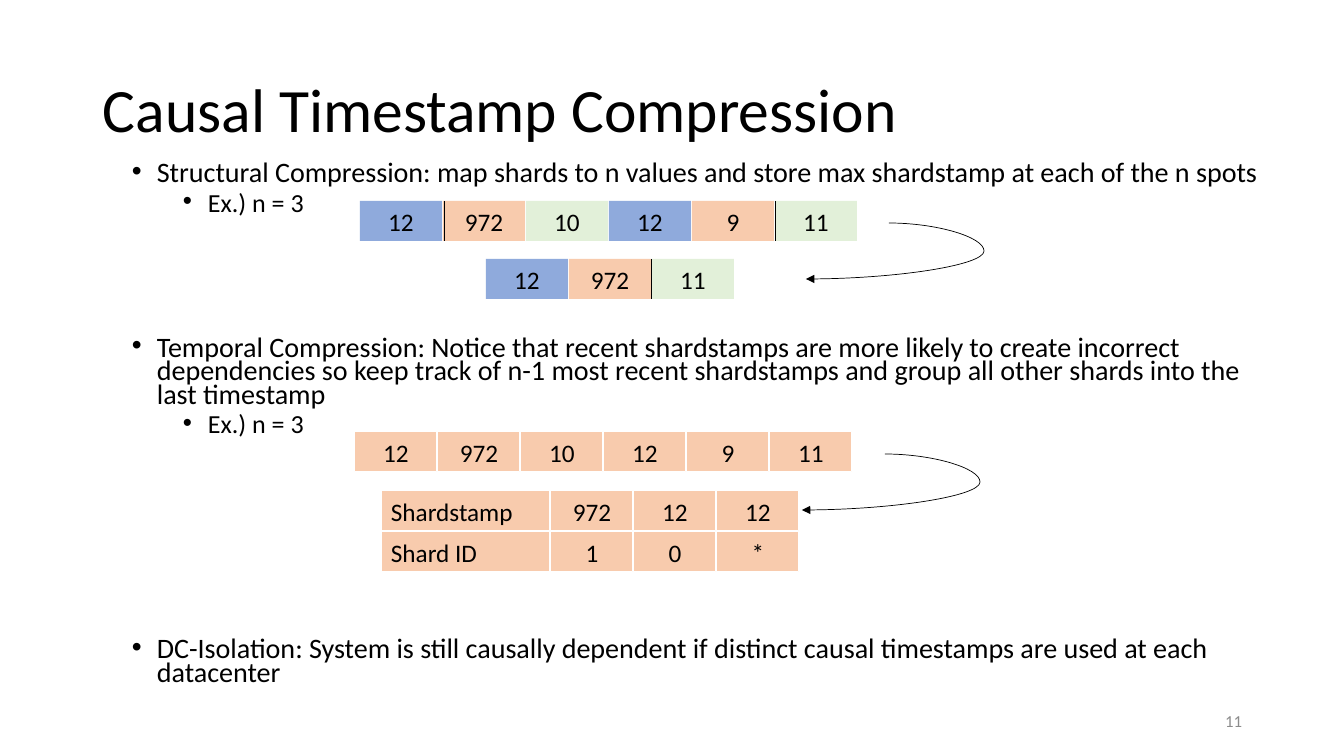
from lxml import etree
from pptx import Presentation
from pptx import util as u
from pptx.dml.color import RGBColor
from pptx.enum import shapes, text
from pptx.oxml.ns import qn

PX = 914400 / 100.8  # EMU in one px
FONT = "Calibri"
BLACK = RGBColor(0x00, 0x00, 0x00)
WHITE = RGBColor(0xFF, 0xFF, 0xFF)
GRAY = RGBColor(0x8C, 0x8C, 0x8C)
BLUE = RGBColor(0x8F, 0xAA, 0xDC)
ORANGE = RGBColor(0xF8, 0xCB, 0xAD)
GREEN = RGBColor(0xE2, 0xF0, 0xD9)

# Content
TITLE = "Causal Timestamp Compression"
PAGE = "11"
BULLETS = [  # level, space before in points, text
    (0, 10, "Structural Compression: map shards to n values and store max "
            "shardstamp at each of the n spots"),
    (1, 5, "Ex.) n = 3"),
    (0, 87, "Temporal Compression: Notice that recent shardstamps are more likely "
            "to create incorrect dependencies so keep track of n-1 most recent "
            "shardstamps and group all other shards into the last timestamp"),
    (1, 5, "Ex.) n = 3"),
    (0, 144, "DC-Isolation: System is still causally dependent if distinct causal "
             "timestamps are used at each datacenter"),
]
LEVELS = [  # size in points, left margin in px
    (20.1, 25),
    (18.6, 76),
]
SHARDSTAMPS = ["12", "972", "10", "12", "9", "11"]
ROWS = [  # left, top, values, fills cycled over the values, outline
    (360, 201, SHARDSTAMPS, [BLUE, ORANGE, GREEN], None),
    (486, 259, ["12", "972", "11"], [BLUE, ORANGE, GREEN], None),
    (355, 432, SHARDSTAMPS, [ORANGE], WHITE),
    (551, 491, ["972", "12", "12"], [ORANGE], WHITE),
    (551, 532, ["1", "0", "*"], [ORANGE], WHITE),
]
ROW_LABELS = [(491, "Shardstamp"), (532, "Shard ID")]
SEPARATORS = [(444, 201), (651, 259), (775, 201)]
ARROWS = [(889, 223), (885, 454)]

CELL_WIDTH, CELL_HEIGHT, CELL_PITCH = 82, 40, 83
LABEL_LEFT, LABEL_WIDTH = 381, 169
ARROW_WIDTH, ARROW_HEIGHT, ARROW_BULGE = 83, 56, -114600
BULLET_INDENT = 25


def emu(*lengths):
    return [round(length * PX) for length in lengths]


def write(paragraph, words, size, color, **paragraph_format):
    for name, value in paragraph_format.items():
        setattr(paragraph, name, value)
    run = paragraph.add_run()
    run.text = words
    for name, value in {"name": FONT, "size": u.Pt(size)}.items():
        setattr(run.font, name, value)
    run.font.color.rgb = color


def add_text_box(box, anchor):
    frame = slide.shapes.add_textbox(*emu(*box)).text_frame
    frame.word_wrap = True
    frame.vertical_anchor = anchor
    return frame


def add_cell(box, words, fill, outline, alignment):
    cell = slide.shapes.add_shape(shapes.MSO_SHAPE.RECTANGLE, *emu(*box))
    cell.shadow.inherit = False
    cell.fill.solid()
    cell.fill.fore_color.rgb = fill
    if outline is None:
        cell.line.fill.background()
    else:
        cell.line.color.rgb = outline
        cell.line.width = u.Pt(0.75)
    cell.text_frame.word_wrap = True
    cell.text_frame.vertical_anchor = text.MSO_ANCHOR.TOP
    write(cell.text_frame.paragraphs[0], words, 18, BLACK, alignment=alignment)


def add_line(kind, ends, width):
    line = slide.shapes.add_connector(kind, *emu(*ends))
    line.line.color.rgb = BLACK
    line.line.width = u.Pt(width)
    etree.SubElement(line._element.spPr, qn("a:effectLst"))
    return line


presentation = Presentation()
presentation.slide_width, presentation.slide_height = emu(1344, 756)
slide = presentation.slides.add_slide(presentation.slide_layouts[6])

# Title
title = add_text_box((93, 40, 1159, 146), text.MSO_ANCHOR.MIDDLE)
write(title.paragraphs[0], TITLE, 44, BLACK, line_spacing=0.9)

# Bulleted text
body = add_text_box((122, 159, 1168, 556), text.MSO_ANCHOR.TOP)
for index, (level, space, words) in enumerate(BULLETS):
    paragraph = body.add_paragraph() if index else body.paragraphs[0]
    size, margin = LEVELS[level]
    write(paragraph, words, size, BLACK, level=level, line_spacing=0.7,
          space_before=u.Pt(space))
    properties = paragraph._p.get_or_add_pPr()
    for name, length in {"marL": margin, "indent": -BULLET_INDENT}.items():
        properties.set(name, str(emu(length)[0]))
    etree.SubElement(properties, qn("a:buFont"), typeface="Arial")
    etree.SubElement(properties, qn("a:buChar"), char="•")

# Rows of shardstamps
for left, top, values, fills, outline in ROWS:
    for column, value in enumerate(values):
        box = (left + column * CELL_PITCH, top, CELL_WIDTH, CELL_HEIGHT)
        add_cell(box, value, fills[column % len(fills)], outline, text.PP_ALIGN.CENTER)
for top, label in ROW_LABELS:
    add_cell((LABEL_LEFT, top, LABEL_WIDTH, CELL_HEIGHT), label, ORANGE, WHITE,
             text.PP_ALIGN.LEFT)

# Dark separators between cells
for x, top in SEPARATORS:
    add_line(shapes.MSO_CONNECTOR.STRAIGHT, (x, top, x, top + CELL_HEIGHT), 0.5)

# Curved arrows from each full row to its compressed row
for x, y in ARROWS:
    arrow = add_line(shapes.MSO_CONNECTOR.CURVE,
                     (x, y, x - ARROW_WIDTH, y + ARROW_HEIGHT), 0.5)
    adjustments = arrow._element.spPr.find(qn("a:prstGeom")).find(qn("a:avLst"))
    etree.SubElement(adjustments, qn("a:gd"), name="adj1", fmla=f"val {ARROW_BULGE}")
    etree.SubElement(arrow.line._get_or_add_ln(), qn("a:tailEnd"), type="triangle")

# Slide number
number = add_text_box((950, 701, 302, 40), text.MSO_ANCHOR.MIDDLE)
write(number.paragraphs[0], PAGE, 12, GRAY, alignment=text.PP_ALIGN.RIGHT)

presentation.save("out.pptx")
